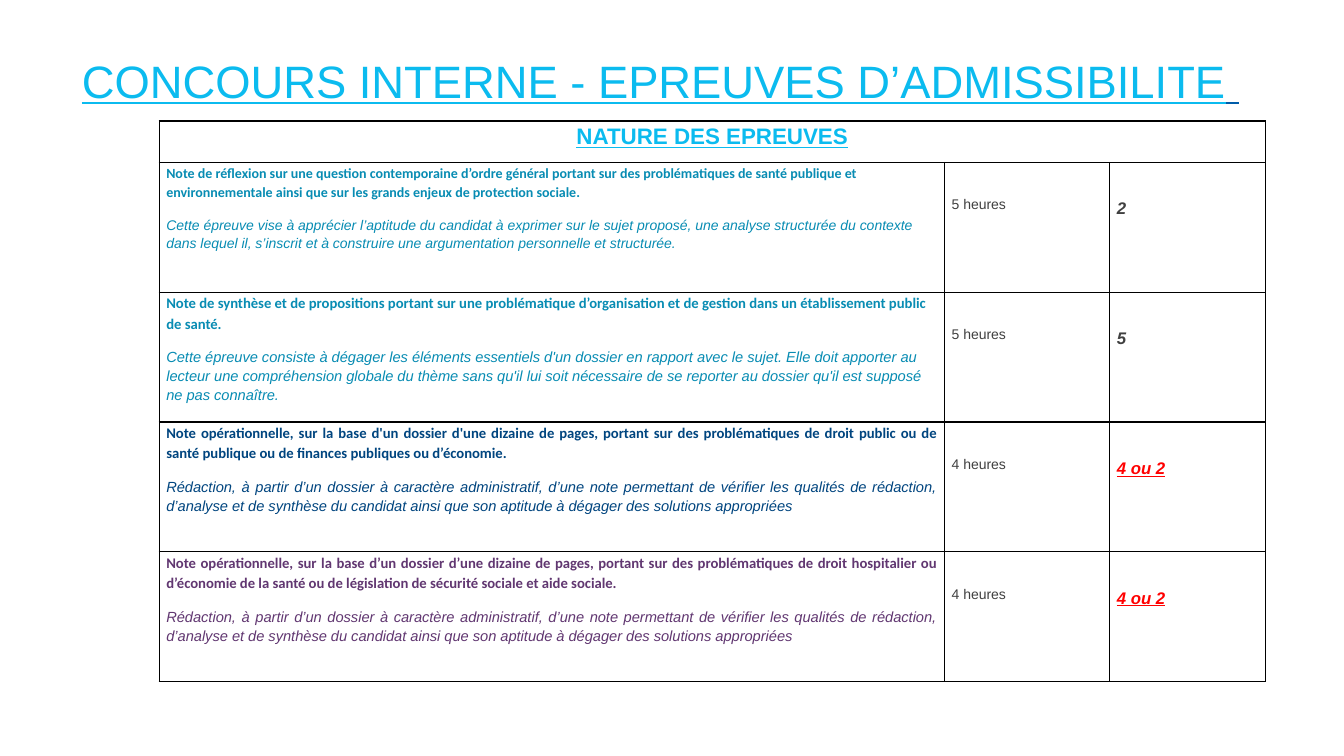
from lxml.etree import SubElement
from pptx import Presentation
from pptx.dml.color import RGBColor
from pptx.enum.text import MSO_ANCHOR, MSO_AUTO_SIZE, PP_ALIGN as Align
from pptx.oxml.ns import qn
from pptx.util import Pt

COLORS = {
    "sky": "0BBBEF", "blue": "005CA9", "teal": "088CB3", "navy": "00457F",
    "plum": "613771", "gray": "404040", "red": "FF0000", "border": "000000",
}
DRAFTING = (
    "Rédaction, à partir d’un dossier à caractère administratif, d’une note permettant "
    "de vérifier les qualités de rédaction, d’analyse et de synthèse du candidat ainsi "
    "que son aptitude à dégager des solutions appropriées"
)
EXAMS = [
    ("Note de réflexion sur une question contemporaine d’ordre général portant sur des "
     "problématiques de santé publique et environnementale ainsi que sur les grands "
     "enjeux de protection sociale.",
     "Cette épreuve vise à apprécier l’aptitude du candidat à exprimer sur le sujet "
     "proposé, une analyse structurée du contexte dans lequel il, s’inscrit et à "
     "construire une argumentation personnelle et structurée.",
     10, "teal", Align.LEFT, "5 heures", "2"),
    ("Note de synthèse et de propositions portant sur une problématique d’organisation "
     "et de gestion dans un établissement public de santé.",
     "Cette épreuve consiste à dégager les éléments essentiels d'un dossier en rapport "
     "avec le sujet. Elle doit apporter au lecteur une compréhension globale du thème "
     "sans qu'il lui soit nécessaire de se reporter au dossier qu'il est supposé ne pas "
     "connaître.",
     10.5, "teal", Align.LEFT, "5 heures", "5"),
    ("Note opérationnelle, sur la base d'un dossier d'une dizaine de pages, portant sur "
     "des problématiques de droit public ou de santé publique ou de finances publiques "
     "ou d’économie.",
     DRAFTING, 10.5, "navy", Align.JUSTIFY, "4 heures", "4 ou 2"),
    ("Note opérationnelle, sur la base d’un dossier d’une dizaine de pages, portant sur "
     "des problématiques de droit hospitalier ou d’économie de la santé ou de "
     "législation de sécurité sociale et aide sociale.",
     DRAFTING, 10.5, "plum", Align.JUSTIFY, "4 heures", "4 ou 2"),
]


def style_run(run, size, color, font="Arial", bold=False, italic=False, underline=False):
    run.font.name = font
    run.font.size = Pt(size)
    run.font.color.rgb = RGBColor.from_string(COLORS[color])
    run.font.bold = bold
    run.font.italic = italic
    run.font.underline = underline


def write_cell(cell, text, styles, align=Align.LEFT, top=0):
    cell.margin_left = cell.margin_right = Pt(5)
    cell.margin_top, cell.margin_bottom = Pt(top), Pt(0)
    cell.text_frame.text = text
    for paragraph, style in zip(cell.text_frame.paragraphs, styles):
        paragraph.alignment = align
        paragraph.line_spacing = 1.15
        paragraph.space_after = Pt(10)
        style_run(paragraph.runs[0], **style)


prs = Presentation()
prs.slide_width, prs.slide_height = Pt(960), Pt(540)
slide = prs.slides.add_slide(prs.slide_layouts[5])

title = slide.shapes.title
title.left, title.top, title.width, title.height = Pt(40.3), Pt(33.1), Pt(862.6), Pt(53.3)
heading = title.text_frame
heading.text = "CONCOURS INTERNE - EPREUVES D’ADMISSIBILITE"
heading.word_wrap = True
heading.auto_size = MSO_AUTO_SIZE.NONE
heading.vertical_anchor = MSO_ANCHOR.MIDDLE
heading_line = heading.paragraphs[0]
heading_line.alignment = Align.CENTER
heading_line.line_spacing = 0.9
heading_line.add_run().text = " "
for run, color in zip(heading_line.runs, ("sky", "blue")):
    style_run(run, 32.4, color, underline=True)

exam_table = slide.shapes.add_table(
    len(EXAMS) + 1, 3, Pt(113.8), Pt(86.4), Pt(789.9), Pt(400.4)).table
exam_table.first_row = False
exam_table.horz_banding = False
for column, width in zip(exam_table.columns, (561, 118, 110.9)):
    column.width = Pt(width)
for row, height in zip(exam_table.rows, [29.6] + [92.7] * len(EXAMS)):
    row.height = Pt(height)

for cell in exam_table.iter_cells():
    properties = cell._tc.get_or_add_tcPr()
    for side in ("a:lnL", "a:lnR", "a:lnT", "a:lnB"):
        border = SubElement(properties, qn(side), w=str(Pt(1)))
        border_fill = SubElement(border, qn("a:solidFill"))
        SubElement(border_fill, qn("a:srgbClr"), val=COLORS["border"])
    cell.fill.background()

header = exam_table.cell(0, 0)
header.merge(exam_table.cell(0, 2))
write_cell(header, "NATURE DES EPREUVES",
           [dict(size=16, color="sky", bold=True, underline=True)], Align.CENTER)

for row, (subject, aim, size, color, align, duration, weight) in enumerate(EXAMS, 1):
    optional = "ou" in weight
    write_cell(exam_table.cell(row, 0), f"{subject}\n{aim}",
               [dict(size=size, color=color, font="Calibri", bold=True),
                dict(size=size, color=color, italic=True)], align)
    write_cell(exam_table.cell(row, 1), duration, [dict(size=10, color="gray")], top=23.2)
    write_cell(exam_table.cell(row, 2), weight,
               [dict(size=12, color="red" if optional else "gray",
                     bold=True, italic=True, underline=optional)], top=24.5)

prs.save("out.pptx")
